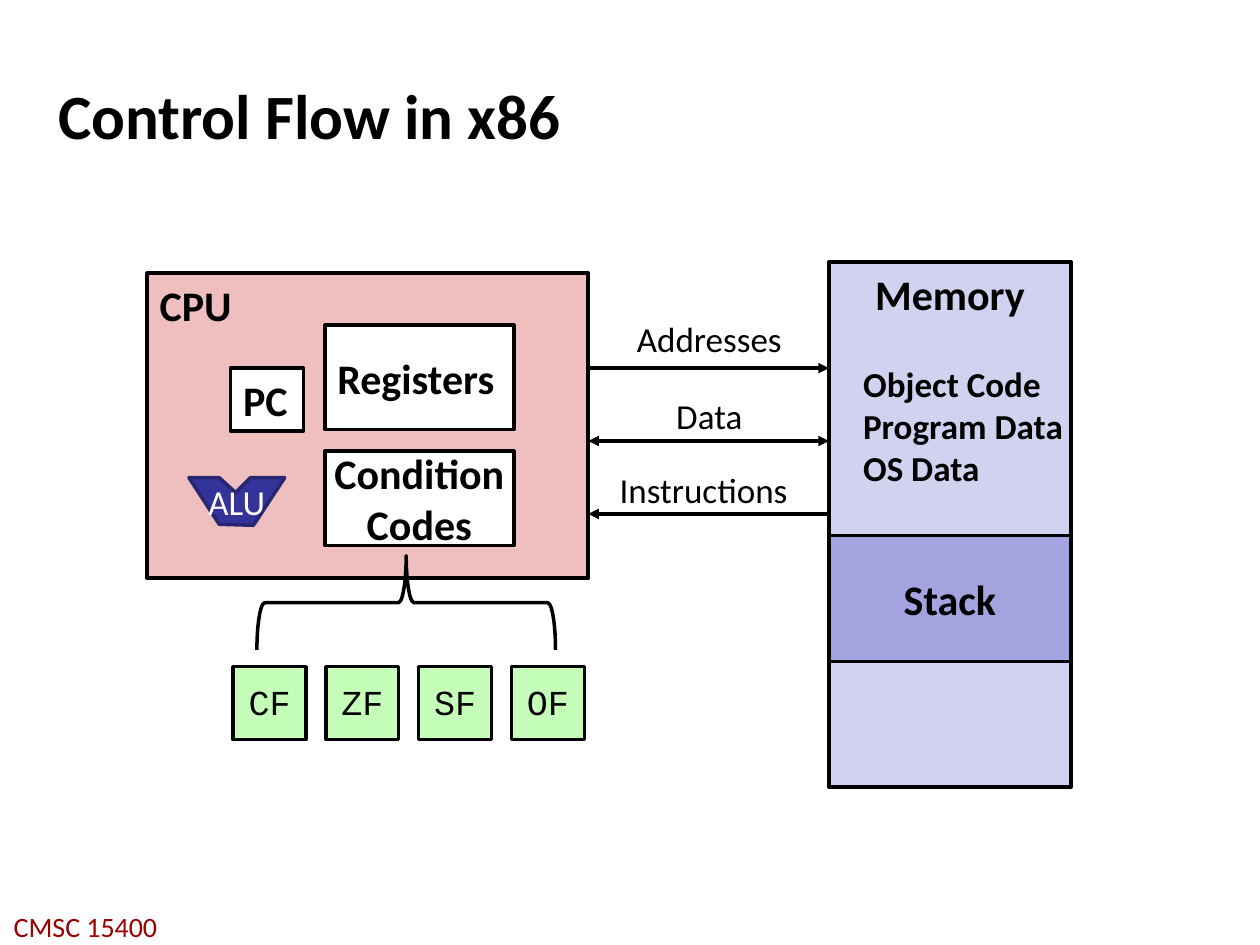
"""Build the slide on control flow in x86: CPU, memory, buses and condition flags."""
from lxml import etree
from pptx import Presentation
from pptx.dml.color import RGBColor
from pptx.enum import shapes, text
from pptx.oxml.ns import qn
from pptx.util import Cm, Pt

COLORS = {
    "black": "000000", "white": "FFFFFF", "footer": "990000", "cpu": "EFBFBF",
    "memory": "D1D1F0", "stack": "A3A3E0", "alu": "333399", "alu_line": "262671",
    "flag": "C5FEB8",
}
LEFT, CENTER = text.PP_ALIGN.LEFT, text.PP_ALIGN.CENTER
TOP, MIDDLE = text.MSO_ANCHOR.TOP, text.MSO_ANCHOR.MIDDLE

TITLE = "Control Flow in x86"
FOOTER = "CMSC 15400"
BLOCKS = [
    (["CPU"], (2.97, 5.51, 8.89, 6.15), "cpu", 2.25, LEFT, TOP),
    (["PC"], (4.65, 7.42, 1.47, 1.27), "white", 2, LEFT, MIDDLE),
    (["Registers"], (6.55, 6.55, 3.81, 2.11), "white", 2, LEFT, MIDDLE),
    (["Condition", "Codes"], (6.55, 9.09, 3.81, 1.91), "white", 2, CENTER, MIDDLE),
    (["Memory"], (16.71, 5.28, 4.88, 10.59), "memory", 2, CENTER, TOP),
    (["Stack"], (16.71, 10.8, 4.88, 2.54), "stack", 2, CENTER, MIDDLE),
]
MEMORY_CONTENTS = ["Object Code", "Program Data", "OS Data"]
BUSES = [
    ("Addresses", 6.27, 4.88, ["tailEnd"]),
    ("Data", 7.82, 4.88, ["headEnd", "tailEnd"]),
    ("Instructions", 9.32, 4.65, ["headEnd"]),
]
BUS_LEFT, BUS_RIGHT, BUS_TOP, BUS_STEP = 11.86, 16.71, 7.42, 1.47
FLAGS = ["CF", "ZF", "SF", "OF"]
FLAG_LEFT, FLAG_TOP, FLAG_SIZE, FLAG_STEP = 4.7, 13.44, 1.47, 1.87
ALU_OUTLINE = [(3.81, 9.63), (4.42, 10.57), (5.11, 10.59), (5.74, 9.63),
               (5.05, 9.63), (4.75, 9.93), (4.42, 9.63)]


def color(name):
    return RGBColor.from_string(COLORS[name])


def lengths(values):
    return [Cm(value) for value in values]


def write(shape, lines, size, bold=False, align=CENTER, anchor=MIDDLE, ink="black",
          font="Calibri", wrap=True, inset=None, spacing=None):
    frame = shape.text_frame
    frame.text = "\n".join(lines)
    frame.auto_size = text.MSO_AUTO_SIZE.NONE
    frame.word_wrap = wrap
    frame.vertical_anchor = anchor
    if inset is not None:
        frame.margin_left = frame.margin_right = Cm(inset)
        frame.margin_top = frame.margin_bottom = Cm(inset)
    for para in frame.paragraphs:
        para.alignment = align
        if spacing:
            para.line_spacing = spacing
        para.font.name, para.font.size, para.font.bold = font, Pt(size), bold
        para.font.color.rgb = color(ink)


def paint(shape, fill, line="black", width=2):
    shape.shadow.inherit = False
    if fill:
        shape.fill.solid()
        shape.fill.fore_color.rgb = color(fill)
    else:
        shape.fill.background()
    shape.line.color.rgb = color(line)
    shape.line.width = Pt(width)


def add_box(page, bounds, fill, width=2):
    box = page.shapes.add_shape(shapes.MSO_SHAPE.RECTANGLE, *lengths(bounds))
    paint(box, fill, width=width)
    return box


def add_label(page, bounds, lines, size, **style):
    label = page.shapes.add_textbox(*lengths(bounds))
    write(label, lines, size, anchor=TOP, **style)


def add_arrow(page, y, ends):
    arrow = page.shapes.add_connector(
        shapes.MSO_CONNECTOR.STRAIGHT, *lengths((BUS_LEFT, y, BUS_RIGHT, y)))
    arrow.line.color.rgb = color("black")
    arrow.line.width = Pt(2)
    for end in ends:
        etree.SubElement(arrow.line._get_or_add_ln(), qn(f"a:{end}"), type="triangle")
    etree.SubElement(arrow._element.spPr, qn("a:effectLst"))


def main():
    deck = Presentation()
    deck.slide_width, deck.slide_height = Cm(25.4), Cm(19.05)
    page = deck.slides.add_slide(deck.slide_layouts[5])

    title = page.shapes.title
    title.left, title.top, title.width, title.height = lengths((1.07, 0.71, 23.29, 3.18))
    write(title, [TITLE], 36, bold=True, align=LEFT, inset=0.1)
    add_label(page, (-0.08, 18.21, 3.61, 0.94), [FOOTER], 16, ink="footer", wrap=False)

    for lines, bounds, fill, width, align, anchor in BLOCKS:
        box = add_box(page, bounds, fill, width)
        write(box, lines, 24, bold=True, align=align, anchor=anchor, wrap=False)
    add_label(page, (17.15, 7.19, 4.88, 2.82), MEMORY_CONTENTS, 20, bold=True, align=LEFT)

    for index, (name, top, width, ends) in enumerate(BUSES):
        add_label(page, (BUS_LEFT, top, width, 1.09), [name], 20)
        add_arrow(page, BUS_TOP + index * BUS_STEP, ends)

    start, *rest = [tuple(lengths(point)) for point in ALU_OUTLINE]
    builder = page.shapes.build_freeform(*start)
    builder.add_line_segments(rest, close=True)
    alu = builder.convert_to_shape()
    paint(alu, "alu", "alu_line")
    write(alu, ["ALU"], 20, ink="white")

    for index, name in enumerate(FLAGS):
        left = FLAG_LEFT + index * FLAG_STEP
        flag = add_box(page, (left, FLAG_TOP, FLAG_SIZE, FLAG_SIZE), "flag")
        write(flag, [name], 20, font="Courier New", inset=0.1, spacing=0.95)

    brace = page.shapes.add_shape(
        shapes.MSO_SHAPE.RIGHT_BRACE, *lengths((7.24, 9.14, 1.9, 6.02)))
    brace.rotation = 270
    paint(brace, None)

    deck.save("out.pptx")


if __name__ == "__main__":
    main()
